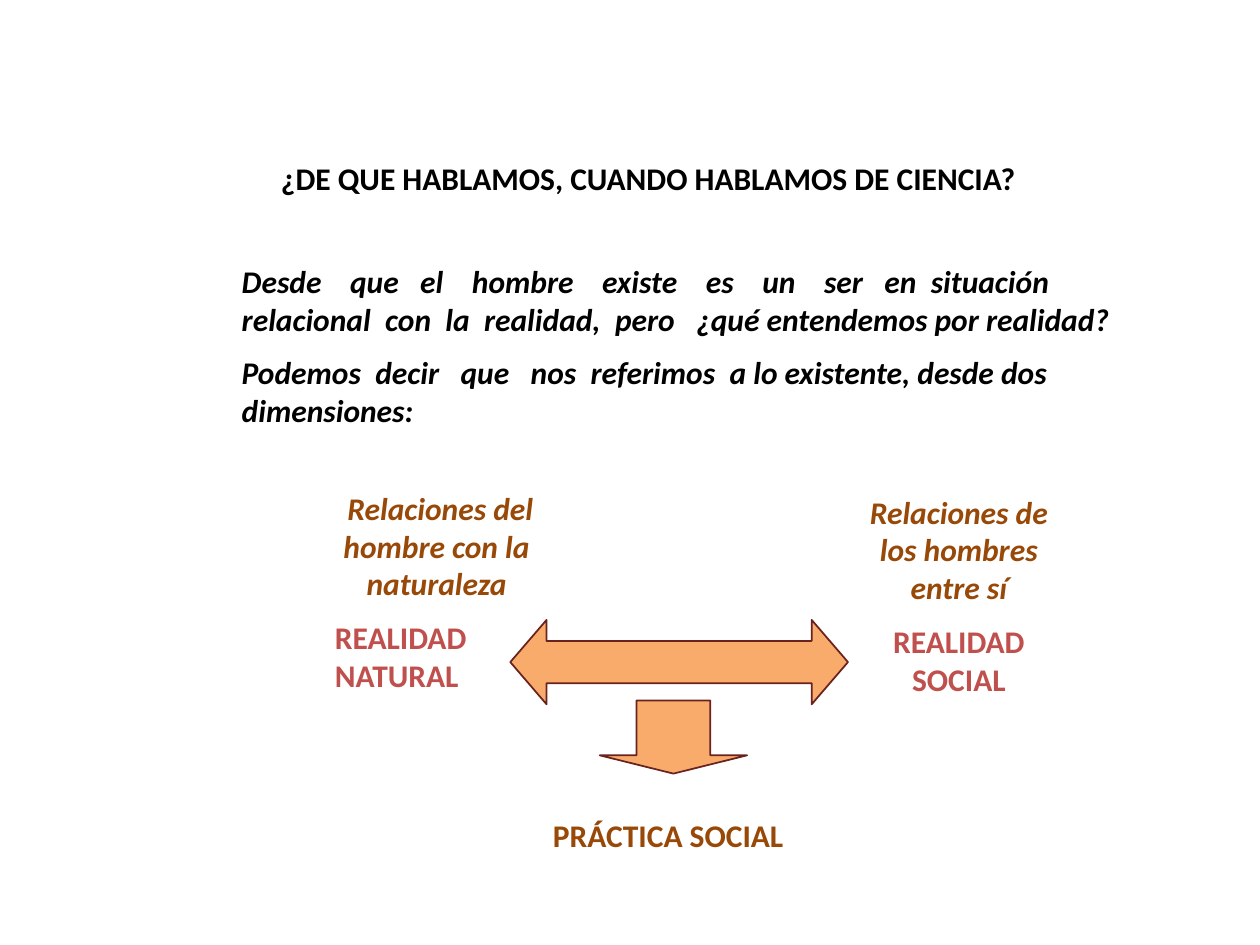
import pptx
import pptx.util
import pptx.dml.color
import pptx.enum.shapes
import pptx.enum.text

Inches, Pt = pptx.util.Inches, pptx.util.Pt
RGBColor = pptx.dml.color.RGBColor
SHAPE = pptx.enum.shapes.MSO_SHAPE
ALIGN = pptx.enum.text.PP_ALIGN
LEFT, CENTER = ALIGN.LEFT, ALIGN.CENTER

BLACK = RGBColor(0x00, 0x00, 0x00)
BROWN = RGBColor(0x98, 0x48, 0x07)
RED = RGBColor(0xC0, 0x50, 0x4D)
ORANGE = RGBColor(0xF9, 0xAB, 0x6B)
MAROON = RGBColor(0x6A, 0x22, 0x1D)

SPACE = 4.07  # width of one space at 18 pt, in points

# Content: box, then paragraphs as (text, colour, italic, alignment, indent)
TITLE = ((2.13, 1.21, 7.33, 0.71),
         [("¿DE QUE HABLAMOS, CUANDO HABLAMOS DE CIENCIA?", BLACK, False, LEFT, 0)])
TEXTS = [
    ((1.82, 2.03, 7.12, 2.37), [
        ("Desde que el hombre existe es un ser en situación\n"
         "relacional con la realidad, pero ¿qué entendemos por realidad?",
         BLACK, True, LEFT, 0),
        ("Podemos decir que nos referimos a lo existente, desde dos dimensiones:",
         BLACK, True, LEFT, 0)]),
    ((2.56, 3.83, 1.81, 1.77), [
        ("Relaciones del hombre con la naturaleza", BROWN, True, CENTER, 0.06),
        ("REALIDAD NATURAL", RED, False, LEFT, 0)]),
    ((6.65, 3.86, 1.92, 2.68), [
        ("Relaciones de los hombres entre sí", BROWN, True, CENTER, 0),
        ("REALIDAD SOCIAL", RED, False, CENTER, 0)]),
    ((4.29, 6.43, 2.6, 0.4), [("PRÁCTICA SOCIAL", BROWN, False, LEFT, 0)]),
]
# Wide word gaps by the first word of a line, in space widths
GAPS = {
    "Desde": (4, 3, 4, 4, 4, 4, 4, 3, 2),
    "relacional": (2, 2, 2, 2, 3),
    "Podemos": (2, 3, 3, 2, 2),
}
ARROWS = [
    (SHAPE.DOWN_ARROW, (4.76, 5.56, 1.17, 0.58), (0.5, 0.25)),
    (SHAPE.LEFT_RIGHT_ARROW, (4.05, 4.92, 2.68, 0.67), (0.5, 0.43)),
]


def add_run(para, text, color, italic, extra=0):
    run = para.add_run()
    run.text = text
    font = run.font
    font.name, font.size = "Calibri", Pt(18)
    font.bold, font.italic = True, italic
    font.color.rgb = color
    if extra:
        run._r.get_or_add_rPr().set("spc", str(round(extra * 100)))


def add_line(para, line, color, italic):
    gaps = GAPS.get(line.split()[0], ())
    parts = line.split(" ", len(gaps))
    for part, gap in zip(parts, gaps):
        add_run(para, part, color, italic)
        add_run(para, " ", color, italic, (gap - 1) * SPACE)
    add_run(para, parts[-1], color, italic)


def write(shape, paras):
    frame = shape.text_frame
    frame.word_wrap = True
    frame.auto_size = pptx.enum.text.MSO_AUTO_SIZE.NONE
    frame.vertical_anchor = pptx.enum.text.MSO_ANCHOR.TOP
    for i, (text, color, italic, align, indent) in enumerate(paras):
        para = frame.add_paragraph() if i else frame.paragraphs[0]
        para.alignment = align
        para.space_before = Pt(9 if i else 0)
        if indent:
            para._p.get_or_add_pPr().set("indent", str(Inches(indent)))
        for j, line in enumerate(text.split("\n")):
            if j:
                para.add_line_break()
            add_line(para, line, color, italic)


deck = pptx.Presentation()
deck.slide_width, deck.slide_height = Inches(10), Inches(7.5)
slide = deck.slides.add_slide(deck.slide_layouts[5])

# Title
box, paras = TITLE
title = slide.shapes.title
title.left, title.top, title.width, title.height = map(Inches, box)
write(title, paras)

# Text blocks
for box, paras in TEXTS:
    write(slide.shapes.add_textbox(*map(Inches, box)), paras)

# Arrows
for kind, box, adjust in ARROWS:
    arrow = slide.shapes.add_shape(kind, *map(Inches, box))
    for i, value in enumerate(adjust):
        arrow.adjustments[i] = value
    arrow.shadow.inherit = False
    arrow.fill.solid()
    arrow.fill.fore_color.rgb = ORANGE
    arrow.line.color.rgb = MAROON
    arrow.line.width = Pt(1)

deck.save("out.pptx")
